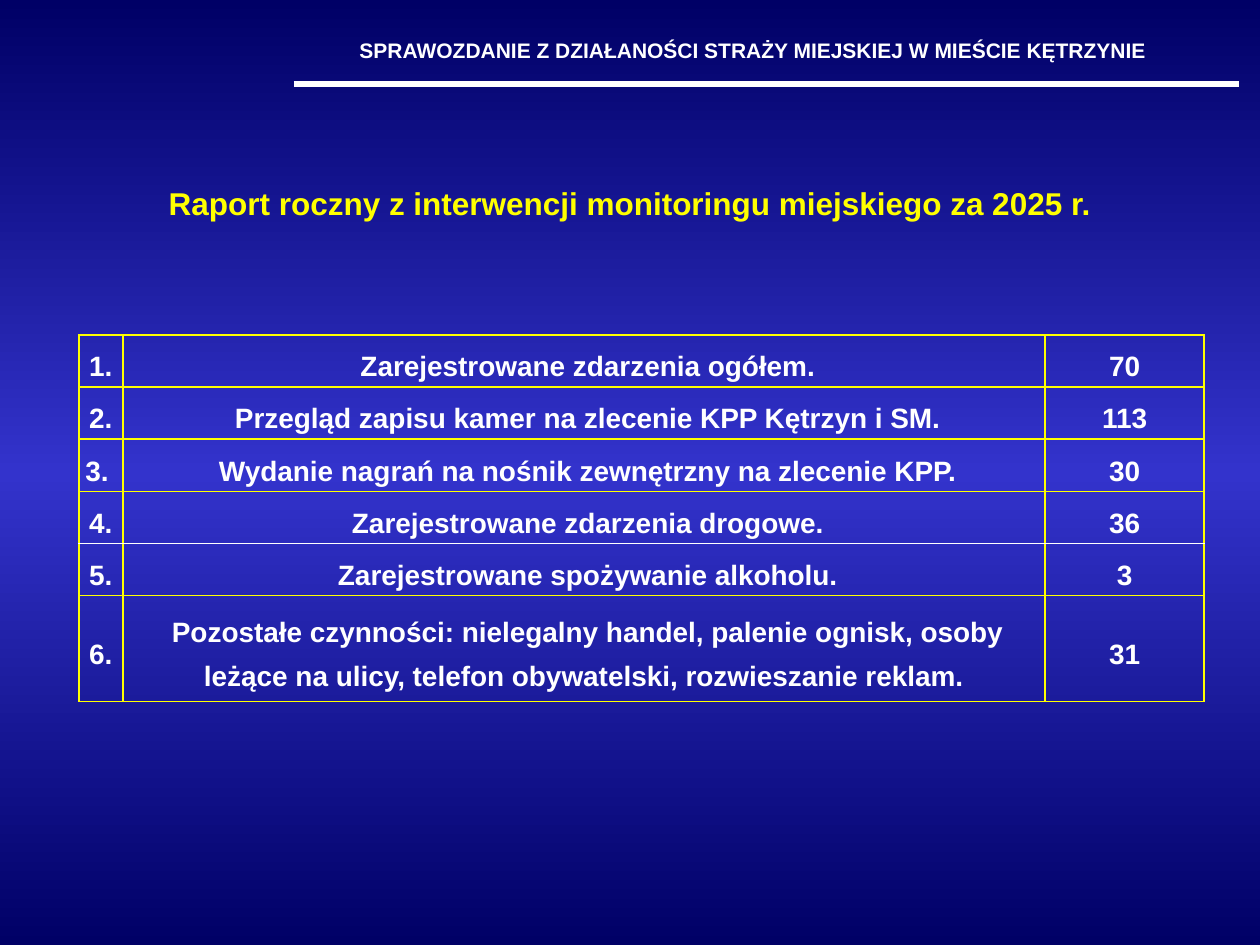
from lxml import etree
from pptx import Presentation
from pptx.dml.color import RGBColor
from pptx.enum.shapes import MSO_CONNECTOR
from pptx.enum.text import MSO_ANCHOR, MSO_AUTO_SIZE, PP_ALIGN
from pptx.oxml import parse_xml
from pptx.oxml.ns import nsdecls, qn
from pptx.util import Pt

STRAIGHT = MSO_CONNECTOR.STRAIGHT
MIDDLE = MSO_ANCHOR.MIDDLE
FIT_SHAPE = MSO_AUTO_SIZE.SHAPE_TO_FIT_TEXT
CENTER = PP_ALIGN.CENTER

COLORS = {"navy": "000066", "blue": "3333CC", "white": "FFFFFF", "yellow": "FFFF00"}
FONT = "Arial"
COLUMN_WIDTHS = (25.2, 527, 90.8)
ROW_HEIGHTS = (29.7,) * 5 + (60.5,)
WHITE_RULE_AFTER_ROW = 3
REPORT_ROWS = [
    ("1.", " Zarejestrowane zdarzenia ogółem.", "70"),
    ("2.", " Przegląd zapisu kamer na zlecenie KPP Kętrzyn i SM.", "113"),
    ("3. ", " Wydanie nagrań na nośnik zewnętrzny na zlecenie KPP.", "30"),
    ("4.", " Zarejestrowane zdarzenia drogowe.", "36"),
    ("5.", " Zarejestrowane spożywanie alkoholu.", "3"),
    ("6.", " Pozostałe czynności: nielegalny handel, palenie ognisk, osoby leżące na ulicy, "
           "telefon obywatelski, rozwieszanie reklam.", "31"),
]


def set_text(text_frame, text, size, color):
    text_frame.text = text
    paragraph = text_frame.paragraphs[0]
    paragraph.alignment = CENTER
    font = paragraph.runs[0].font
    font.name = FONT
    font.size = Pt(size)
    font.bold = True
    font.color.rgb = RGBColor.from_string(COLORS[color])
    return paragraph


def paint_background(slide):
    fill = slide.background.fill
    fill.gradient()
    gradient = slide.background._cSld.bg.bgPr.find(qn("a:gradFill"))
    stops = "".join(
        f'<a:gs pos="{position}"><a:srgbClr val="{COLORS[color]}"/></a:gs>'
        for position, color in ((0, "navy"), (50000, "blue"), (100000, "navy"))
    )
    for child in list(gradient):
        gradient.remove(child)
    gradient.append(parse_xml(f'<a:gsLst {nsdecls("a")}>{stops}</a:gsLst>'))
    etree.SubElement(gradient, qn("a:lin"), ang="5400000", scaled="0")


def add_label(slide, left, top, width, height, text, size, color):
    text_frame = slide.shapes.add_textbox(Pt(left), Pt(top), Pt(width), Pt(height)).text_frame
    text_frame.word_wrap = True
    text_frame.auto_size = FIT_SHAPE
    set_text(text_frame, text, size, color)


def add_header(slide, left, top, width, height):
    add_label(slide, left, top, width, height,
              "SPRAWOZDANIE Z DZIAŁANOŚCI STRAŻY MIEJSKIEJ W MIEŚCIE KĘTRZYNIE ", 12, "white")
    line_left, line_top = left + 12, top + 30
    rule = slide.shapes.add_connector(
        STRAIGHT, Pt(line_left), Pt(line_top), Pt(line_left + 540), Pt(line_top))
    rule.line.color.rgb = RGBColor.from_string(COLORS["white"])
    rule.line.width = Pt(3)
    etree.SubElement(rule._element.spPr, qn("a:effectLst"))


def set_borders(cell, top, bottom):
    properties = cell._tc.get_or_add_tcPr()
    sides = (("lnL", "yellow"), ("lnR", "yellow"), ("lnT", top), ("lnB", bottom))
    for index, (side, color) in enumerate(sides):
        properties.insert(index, parse_xml(
            f'<a:{side} {nsdecls("a")} w="{Pt(1)}"><a:solidFill>'
            f'<a:srgbClr val="{COLORS[color]}"/></a:solidFill></a:{side}>'))


def add_report_table(slide, left, top, width, height):
    table = slide.shapes.add_table(
        len(ROW_HEIGHTS), len(COLUMN_WIDTHS), Pt(left), Pt(top), Pt(width), Pt(height)).table
    table.first_row = False
    table.horz_banding = False
    for column, column_width in zip(table.columns, COLUMN_WIDTHS):
        column.width = Pt(column_width)
    for row_index, (row, row_height) in enumerate(zip(table.rows, ROW_HEIGHTS)):
        row.height = Pt(row_height)
        border_top = "white" if row_index == WHITE_RULE_AFTER_ROW + 1 else "yellow"
        border_bottom = "white" if row_index == WHITE_RULE_AFTER_ROW else "yellow"
        for cell, text in zip(row.cells, REPORT_ROWS[row_index]):
            cell.fill.background()
            cell.vertical_anchor = MIDDLE
            cell.margin_left = cell.margin_right = Pt(1.5)
            cell.margin_top = cell.margin_bottom = Pt(1.5)
            set_text(cell.text_frame, text, 16, "white").line_spacing = 1.4
            set_borders(cell, border_top, border_bottom)


def main():
    presentation = Presentation()
    presentation.slide_width = Pt(720)
    presentation.slide_height = Pt(540)
    slide = presentation.slides.add_slide(presentation.slide_layouts[6])
    paint_background(slide)
    add_header(slide, 156, 18, 552, 21.8)
    add_label(slide, 0, 101.5, 720, 29,
              "Raport roczny z interwencji monitoringu miejskiego za 2025 r.", 18, "yellow")
    add_report_table(slide, 45, 191.3, sum(COLUMN_WIDTHS), sum(ROW_HEIGHTS))
    presentation.save("out.pptx")


if __name__ == "__main__":
    main()
